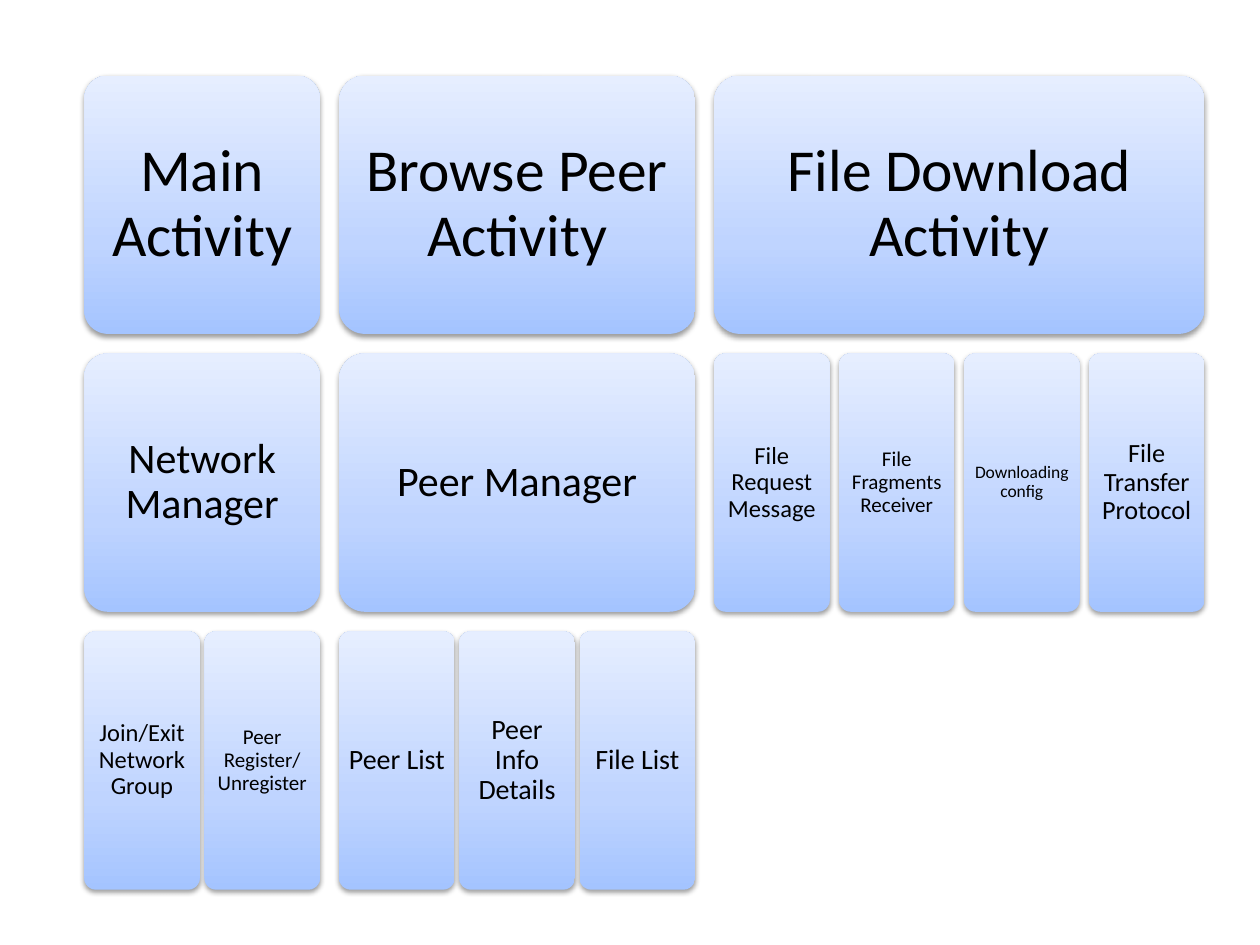
from copy import deepcopy
from dataclasses import dataclass

from lxml import etree
from pptx import Presentation
from pptx import util as u
from pptx.dml.color import RGBColor
from pptx.enum import shapes, text
from pptx.oxml.ns import qn

COLORS = {"bottom": "A4C4FF", "middle": "BFD4FF", "top": "E6EEFF",
          "text": "000000", "shadow": "000000"}
GRADIENT = [(0, "bottom"), (0.35, "middle"), (1, "top")]
FONT = "Calibri"
LEFT, TOP = 48.2, 43.2
LEAF_WIDTH, TILE_HEIGHT = 66, 147.6
COLUMN_GAP, ROW_PITCH = 10.9, 158.8
CORNER = 0.1
CORNER_TEXT_INSET = 0.29
MARGIN_PER_POINT = 0.3


@dataclass
class Tile:
    label: str
    size: float


@dataclass
class Column:
    heads: list[Tile]
    leaves: list[Tile]
    leaf_gap: float

    @property
    def width(self) -> float:
        count = len(self.leaves)
        return count * LEAF_WIDTH + (count - 1) * self.leaf_gap


COLUMNS = [
    Column([Tile("Main Activity", 34), Tile("Network Manager", 24)],
           [Tile("Join/Exit Network Group", 14),
            Tile("Peer Register/ Unregister", 12)], 2.7),
    Column([Tile("Browse Peer Activity", 34), Tile("Peer Manager", 24)],
           [Tile("Peer List", 16), Tile("Peer Info Details", 16),
            Tile("File List", 16)], 2.7),
    Column([Tile("File Download Activity", 34)],
           [Tile("File Request Message", 14),
            Tile("File Fragments Receiver", 12),
            Tile("Downloading config", 10),
            Tile("File Transfer Protocol", 15)], 5.4),
]


def color(name: str) -> RGBColor:
    return RGBColor.from_string(COLORS[name])


def paint(box) -> None:
    box.fill.gradient()
    box.fill.gradient_angle = 90
    properties = box._element.spPr
    stops = properties.find(".//" + qn("a:gsLst"))
    stops.append(deepcopy(stops[-1]))
    for stop, (position, name) in zip(box.fill.gradient_stops, GRADIENT):
        stop.position = position
        stop.color.rgb = color(name)
    box.line.fill.background()
    box.shadow.inherit = False
    shadow = etree.SubElement(
        properties.find(qn("a:effectLst")), qn("a:outerShdw"),
        blurRad=str(u.Pt(3.1)), dist=str(u.Pt(1.6)), dir="5400000",
        rotWithShape="0")
    shade = etree.SubElement(shadow, qn("a:srgbClr"), val=COLORS["shadow"])
    etree.SubElement(shade, qn("a:alpha"), val="38000")


def draw_tile(page, tile: Tile, left: float, row: int, width: float) -> None:
    box = page.shapes.add_shape(
        shapes.MSO_SHAPE.ROUNDED_RECTANGLE, u.Pt(left),
        u.Pt(TOP + row * ROW_PITCH), u.Pt(width), u.Pt(TILE_HEIGHT))
    box.adjustments[0] = CORNER
    paint(box)
    frame = box.text_frame
    frame.text = tile.label
    frame.word_wrap = True
    frame.vertical_anchor = text.MSO_ANCHOR.MIDDLE
    corner = CORNER * min(width, TILE_HEIGHT) * CORNER_TEXT_INSET
    margin = u.Pt(tile.size * MARGIN_PER_POINT - corner)
    frame.margin_left = frame.margin_right = margin
    frame.margin_top = frame.margin_bottom = margin
    para = frame.paragraphs[0]
    para.alignment = text.PP_ALIGN.CENTER
    para.line_spacing = 0.9
    span = para.runs[0]
    span.font.name = FONT
    span.font.size = u.Pt(tile.size)
    span.font.color.rgb = color("text")


def draw_column(page, column: Column, left: float) -> None:
    for row, head in enumerate(column.heads):
        draw_tile(page, head, left, row, column.width)
    for index, leaf in enumerate(column.leaves):
        leaf_left = left + index * (LEAF_WIDTH + column.leaf_gap)
        draw_tile(page, leaf, leaf_left, len(column.heads), LEAF_WIDTH)


def main() -> None:
    deck = Presentation()
    deck.slide_width, deck.slide_height = u.Pt(720), u.Pt(540)
    page = deck.slides.add_slide(deck.slide_layouts[6])
    left = LEFT
    for column in COLUMNS:
        draw_column(page, column, left)
        left += column.width + COLUMN_GAP
    deck.save("out.pptx")


if __name__ == "__main__":
    main()
